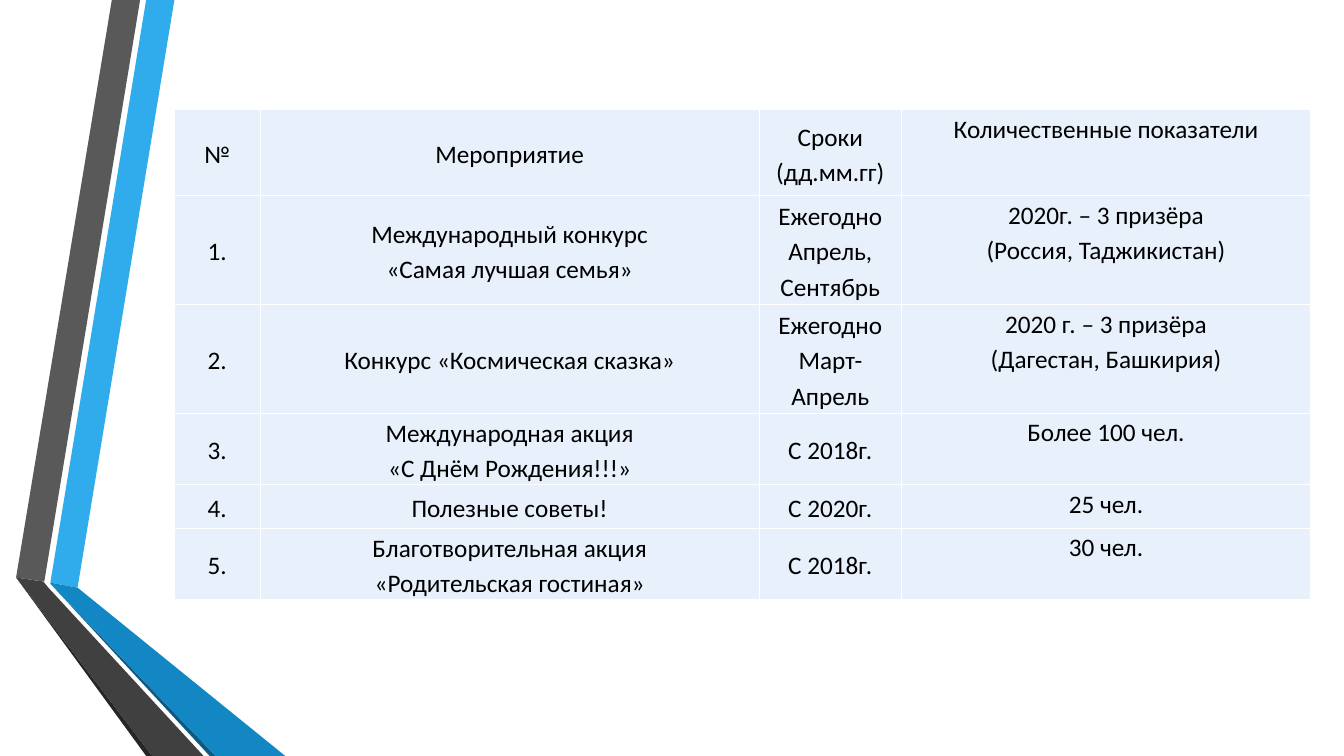
from lxml import etree
from pptx import Presentation
from pptx.dml.color import RGBColor
from pptx.enum.text import MSO_ANCHOR, PP_ALIGN
from pptx.oxml.ns import qn
from pptx.util import Inches, Pt

CENTER = PP_ALIGN.CENTER
TOP, MIDDLE = MSO_ANCHOR.TOP, MSO_ANCHOR.MIDDLE

SLIDE_SIZE = (13.33, 7.5)
CELL_FILL, BORDER, INK = "E8F1FB", "FFFFFF", "000000"

# Folded ribbons: colour and outline, in inches from the corner of their box
RIBBON_FACES = [
    ("30ACEC", [(0.5, 5.78), (0.77, 5.83), (1.73, 0), (1.45, 0)]),
    ("595959", [(1.39, 0), (1.11, 0), (0.16, 5.73), (0.44, 5.77)]),
    ("262626", [(0.16, 5.73), (1.45, 7.5), (1.51, 7.5)]),
    ("0C5A82", [(0.5, 5.79), (2.08, 7.5), (2.14, 7.5)]),
    ("1287C3", [(0.5, 5.79), (2.14, 7.5), (2.83, 7.5), (0.77, 5.83), (0.5, 5.78)]),
    ("404040", [(2.02, 7.5), (0.48, 5.83), (0.43, 5.77), (0.16, 5.73), (1.51, 7.5)]),
]

COLUMN_WIDTHS = [0.85, 4.95, 1.41, 4.06]
ROW_HEIGHTS = [0.85, 1.08, 1.08, 0.71, 0.43, 0.71]
EVENTS = [
    ("№", "Мероприятие", "Сроки (дд.мм.гг)", "Количественные показатели"),
    ("1.", "Международный конкурс\n«Самая лучшая семья»",
     "Ежегодно\nАпрель, Сентябрь", "2020г. – 3 призёра\n(Россия, Таджикистан)"),
    ("2.", "Конкурс «Космическая сказка»",
     "Ежегодно\nМарт-Апрель", "2020 г. – 3 призёра\n(Дагестан, Башкирия)"),
    ("3.", "Международная акция\n«С Днём Рождения!!!»", "С 2018г.", "Более 100 чел."),
    ("4.", "Полезные советы!", "С 2020г.", "25 чел."),
    ("5.", "Благотворительная акция\n«Родительская гостиная»", "С 2018г.", "30 чел."),
]
CELL_FORMAT = {"margin_left": Inches(0.07), "margin_right": Inches(0.07),
               "margin_top": 0, "margin_bottom": 0}
FONT_FORMAT = {"name": "Calibri", "size": Pt(18)}


def color(hex_code):
    return RGBColor.from_string(hex_code)


def apply_format(target, values):
    for attribute, value in values.items():
        setattr(target, attribute, value)


def add_ribbons(slide, left, top):
    """Draw the folded ribbons from the given corner."""
    for fill, outline in RIBBON_FACES:
        points = [(Inches(left + x), Inches(top + y)) for x, y in outline]
        builder = slide.shapes.build_freeform(*points[0])
        builder.add_line_segments(points[1:], close=True)
        face = builder.convert_to_shape()
        face.shadow.inherit = False
        face.fill.solid()
        face.fill.fore_color.rgb = color(fill)
        face.line.fill.background()


def add_borders(cell):
    properties = cell._tc.get_or_add_tcPr()
    for side in ("a:lnL", "a:lnR", "a:lnT", "a:lnB"):
        edge = etree.SubElement(properties, qn(side), w=str(Pt(1)))
        fill = etree.SubElement(edge, qn("a:solidFill"))
        etree.SubElement(fill, qn("a:srgbClr"), val=BORDER)


def fill_cell(cell, text, anchor):
    add_borders(cell)
    cell.fill.solid()
    cell.fill.fore_color.rgb = color(CELL_FILL)
    apply_format(cell, CELL_FORMAT | {"vertical_anchor": anchor})
    cell.text = text
    for paragraph in cell.text_frame.paragraphs:
        apply_format(paragraph, {"alignment": CENTER, "line_spacing": 1.15})
        apply_format(paragraph.font, FONT_FORMAT)
        paragraph.font.color.rgb = color(INK)


def add_events_table(slide, left, top):
    """Place the table of events from the given corner."""
    box = (left, top, sum(COLUMN_WIDTHS), sum(ROW_HEIGHTS))
    table = slide.shapes.add_table(len(EVENTS), len(COLUMN_WIDTHS),
                                   *map(Inches, box)).table
    for column, width in zip(table.columns, COLUMN_WIDTHS):
        column.width = Inches(width)
    for row, height, texts in zip(table.rows, ROW_HEIGHTS, EVENTS):
        row.height = Inches(height)
        # The last column, with the results, is aligned to the top
        anchors = [MIDDLE] * (len(texts) - 1) + [TOP]
        for cell, text, anchor in zip(row.cells, texts, anchors):
            fill_cell(cell, text, anchor)


def main():
    presentation = Presentation()
    presentation.slide_width, presentation.slide_height = map(Inches, SLIDE_SIZE)
    slide = presentation.slides.add_slide(presentation.slide_layouts[6])
    add_ribbons(slide, 0, 0)
    add_events_table(slide, 1.73, 1.09)
    presentation.save("out.pptx")


if __name__ == "__main__":
    main()
